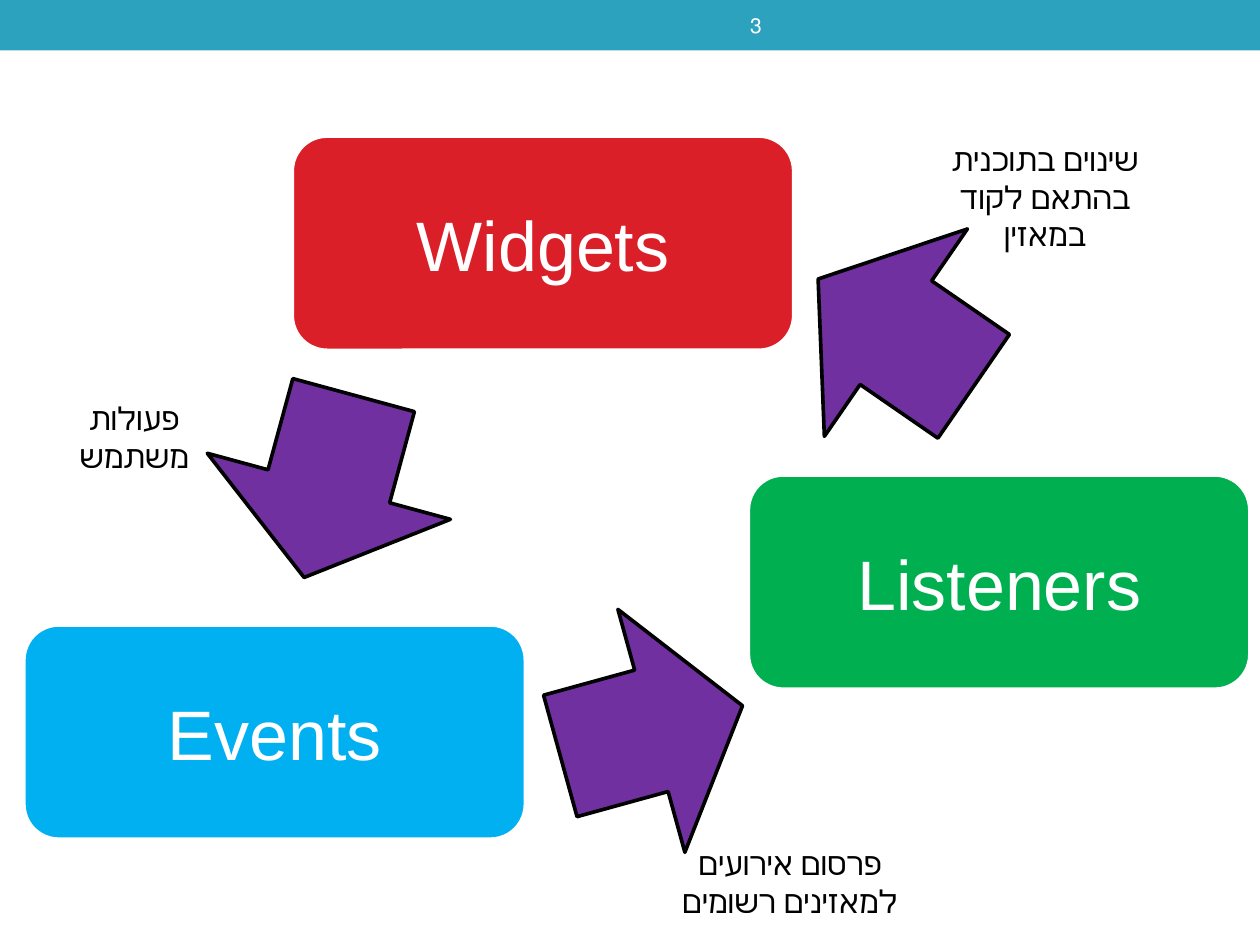
from dataclasses import dataclass

from pptx import Presentation
from pptx.dml.color import RGBColor as RGB
from pptx.enum.shapes import MSO_SHAPE as SHAPE
from pptx.enum.text import MSO_ANCHOR as ANCHOR, PP_ALIGN as ALIGN
from pptx.util import Inches, Pt


@dataclass(frozen=True)
class Theme:
    font: str = "Arial"
    bar: str = "2DA2BF"
    arrow: str = "7030A0"
    red: str = "DA1F28"
    green: str = "00B050"
    blue: str = "00B0F0"
    white: str = "FFFFFF"
    black: str = "000000"
    box_size: int = 40
    label_size: int = 18
    number_size: int = 12
    box_line: float = 3.5
    arrow_line: float = 2.08


class SlideBuilder:
    def __init__(self, slide, theme):
        self.s = slide
        self.theme = theme

    def _write(self, sp, lines, size, color, anchor):
        tf = sp.text_frame
        frame_format = {"word_wrap": True, "vertical_anchor": anchor}
        for name, value in frame_format.items():
            setattr(tf, name, value)
        for i, line in enumerate(lines):
            p = tf.add_paragraph() if i else tf.paragraphs[0]
            p.alignment = ALIGN.CENTER
            p._p.get_or_add_pPr().set("rtl", "1")
            r = p.add_run()
            r.text = line
            font_format = {"name": self.theme.font, "size": Pt(size)}
            for name, value in font_format.items():
                setattr(r.font, name, value)
            r.font.color.rgb = RGB.from_string(color)

    def _shape(self, kind, at, fill, line=None, width=0):
        sp = self.s.shapes.add_shape(kind, *map(Inches, at))
        sp.shadow.inherit = False
        sp.fill.solid()
        sp.fill.fore_color.rgb = RGB.from_string(fill)
        if line:
            sp.line.color.rgb = RGB.from_string(line)
            sp.line.width = Pt(width)
        else:
            sp.line.fill.background()
        return sp

    def bar(self, height):
        self._shape(SHAPE.RECTANGLE, (0, 0, 10, height), self.theme.bar)

    def arrow(self, left, top, rotation):
        t = self.theme
        sp = self._shape(SHAPE.DOWN_ARROW, (left, top, 2, 1.5),
                         t.arrow, t.black, t.arrow_line)
        sp.rotation = rotation

    def box(self, text, left, top, fill):
        t = self.theme
        sp = self._shape(SHAPE.ROUNDED_RECTANGLE, (left, top, 4, 1.72),
                         fill, t.white, t.box_line)
        self._write(sp, [text], t.box_size, t.white, ANCHOR.MIDDLE)

    def label(self, lines, at, size=None, color=None, anchor=ANCHOR.TOP):
        t = self.theme
        sp = self.s.shapes.add_textbox(*map(Inches, at))
        self._write(sp, lines, size or t.label_size, color or t.black, anchor)


def main():
    prs = Presentation()
    prs.slide_width, prs.slide_height = Inches(10), Inches(7.5)
    theme = Theme()
    b = SlideBuilder(prs.slides.add_slide(prs.slide_layouts[6]), theme)

    b.bar(0.4)
    b.label(["3"], (3.75, 0.02, 4.5, 0.36), theme.number_size, theme.white,
            ANCHOR.MIDDLE)

    for left, top, rotation in [(1.61, 3.11, 15.2), (4.17, 5.05, 254.6),
                                (6.11, 1.89, 124.6)]:
        b.arrow(left, top, rotation)

    for text, left, top, fill in [("Widgets", 2.31, 1.07, theme.red),
                                  ("Listeners", 5.93, 3.76, theme.green),
                                  ("Events", 0.18, 4.95, theme.blue)]:
        b.box(text, left, top, fill)

    b.label(["פרסום אירועים", "למאזינים רשומים"], (3.77, 6.65, 5, 0.71))
    b.label(["שינוים בתוכנית בהתאם לקוד במאזין"], (7.31, 1.06, 1.97, 1.01))
    b.label(["פעולות משתמש"], (0.18, 3.12, 1.77, 0.71))

    prs.save("out.pptx")


if __name__ == "__main__":
    main()
